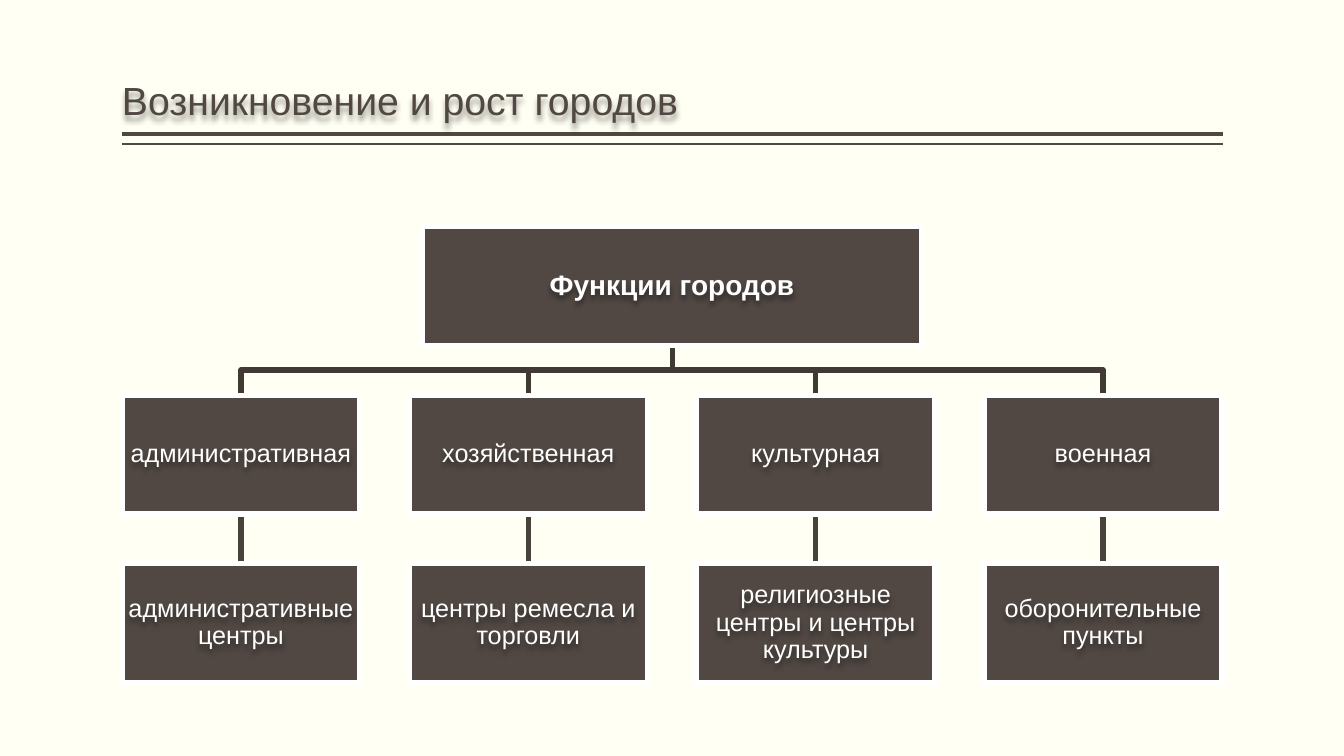
from lxml import etree
from pptx import Presentation
from pptx.dml.color import RGBColor
from pptx.enum.shapes import MSO_CONNECTOR, MSO_SHAPE
from pptx.enum.text import MSO_ANCHOR, PP_ALIGN
from pptx.oxml.ns import qn
from pptx.util import Inches, Pt

RECT = MSO_SHAPE.RECTANGLE
STRAIGHT = MSO_CONNECTOR.STRAIGHT
MIDDLE, BOTTOM = MSO_ANCHOR.MIDDLE, MSO_ANCHOR.BOTTOM
LEFT, CENTER = PP_ALIGN.LEFT, PP_ALIGN.CENTER

BROWN, WHITE, CREAM = "514843", "FFFFFF", "FFFFF3"
BRANCH, STEM = "403934", "49413C"
EDGE = 3.78
START, END = 1.21, 12.13
STEP, WIDTH, HEIGHT = 2.85, 2.36, 1.18
TOPS = 2.25, 3.92, 5.59
MID, BUS = 6.67, 3.67
COLUMNS = [
    ("административная", "административные центры"),
    ("хозяйственная", "центры ремесла и торговли"),
    ("культурная", "религиозные центры и центры культуры"),
    ("военная", "оборонительные пункты"),
]


def color(value):
    return RGBColor.from_string(value)


def assign(target, values):
    for name, value in values.items():
        setattr(target, name, value)


def stroke(shape, tint, width):
    shape.line.color.rgb = color(tint)
    shape.line.width = Pt(width)


def glow(shape):
    """Cast a soft shadow from the text of an unfilled box."""
    effects = etree.SubElement(shape.element.spPr, qn("a:effectLst"))
    shadow = etree.SubElement(effects, qn("a:outerShdw"), blurRad="50800",
                              dist="38100", dir="5400000", algn="t", rotWithShape="0")
    tint = etree.SubElement(shadow, qn("a:srgbClr"), val="000000")
    etree.SubElement(tint, qn("a:alpha"), val="40000")


def write(slide, text, area, size, tint, bold=False, align=CENTER,
          anchor=MIDDLE, side=0.01, edge=0.01):
    box = slide.shapes.add_textbox(*map(Inches, area))
    frame = box.text_frame
    assign(frame, {
        "word_wrap": True, "vertical_anchor": anchor,
        "margin_left": Inches(side), "margin_right": Inches(side),
        "margin_top": Inches(edge), "margin_bottom": Inches(edge),
    })
    para = frame.paragraphs[0]
    assign(para, {"text": text, "alignment": align, "line_spacing": 0.9})
    font = para.runs[0].font
    assign(font, {"name": "Arial", "size": Pt(size), "bold": bold})
    font.color.rgb = color(tint)
    glow(box)


def add_box(slide, text, left, top, width=WIDTH, size=18, bold=False):
    area = left, top, width, HEIGHT
    box = slide.shapes.add_shape(RECT, *map(Inches, area))
    box.shadow.inherit = False
    box.fill.solid()
    box.fill.fore_color.rgb = color(BROWN)
    stroke(box, WHITE, EDGE)
    write(slide, text, area, size, WHITE, bold)


def add_line(slide, ends, tint, width):
    line = slide.shapes.add_connector(STRAIGHT, *map(Inches, ends))
    stroke(line, tint, width)
    etree.SubElement(line.element.spPr, qn("a:effectLst"))


def add_branch(slide, x):
    """Draw the bent line from the root box down to a column at x."""
    spots = (MID, TOPS[0] + HEIGHT), (MID, BUS), (x, BUS), (x, TOPS[1])
    first, *rest = [tuple(map(Inches, spot)) for spot in spots]
    pen = slide.shapes.build_freeform(*first)
    pen.add_line_segments(rest, close=False)
    shape = pen.convert_to_shape()
    shape.shadow.inherit = False
    shape.fill.background()
    stroke(shape, BRANCH, EDGE)


def add_title(slide):
    for y, width in ((1.33, 3), (1.43, 1)):
        add_line(slide, (START, y, END, y), BROWN, width)
    write(slide, "Возникновение и рост городов", (START, 0.08, END - START, 1.2),
          28, BROWN, align=LEFT, anchor=BOTTOM, side=0, edge=0.05)


def add_tree(slide):
    lefts = [START + STEP * i for i in range(len(COLUMNS))]
    for left in lefts:
        x = left + WIDTH / 2
        add_line(slide, (x, TOPS[1] + HEIGHT, x, TOPS[2]), STEM, EDGE)
        add_branch(slide, x)
    add_box(slide, "Функции городов", 4.19, TOPS[0], 4.95, 20, True)
    for left, texts in zip(lefts, COLUMNS):
        for top, text in zip(TOPS[1:], texts):
            add_box(slide, text, left, top)


def main():
    deck = Presentation()
    assign(deck, {"slide_width": Inches(13.33), "slide_height": Inches(7.5)})
    slide = deck.slides.add_slide(deck.slide_layouts[6])
    fill = slide.background.fill
    fill.solid()
    fill.fore_color.rgb = color(CREAM)
    add_title(slide)
    add_tree(slide)
    deck.save("out.pptx")


if __name__ == "__main__":
    main()
